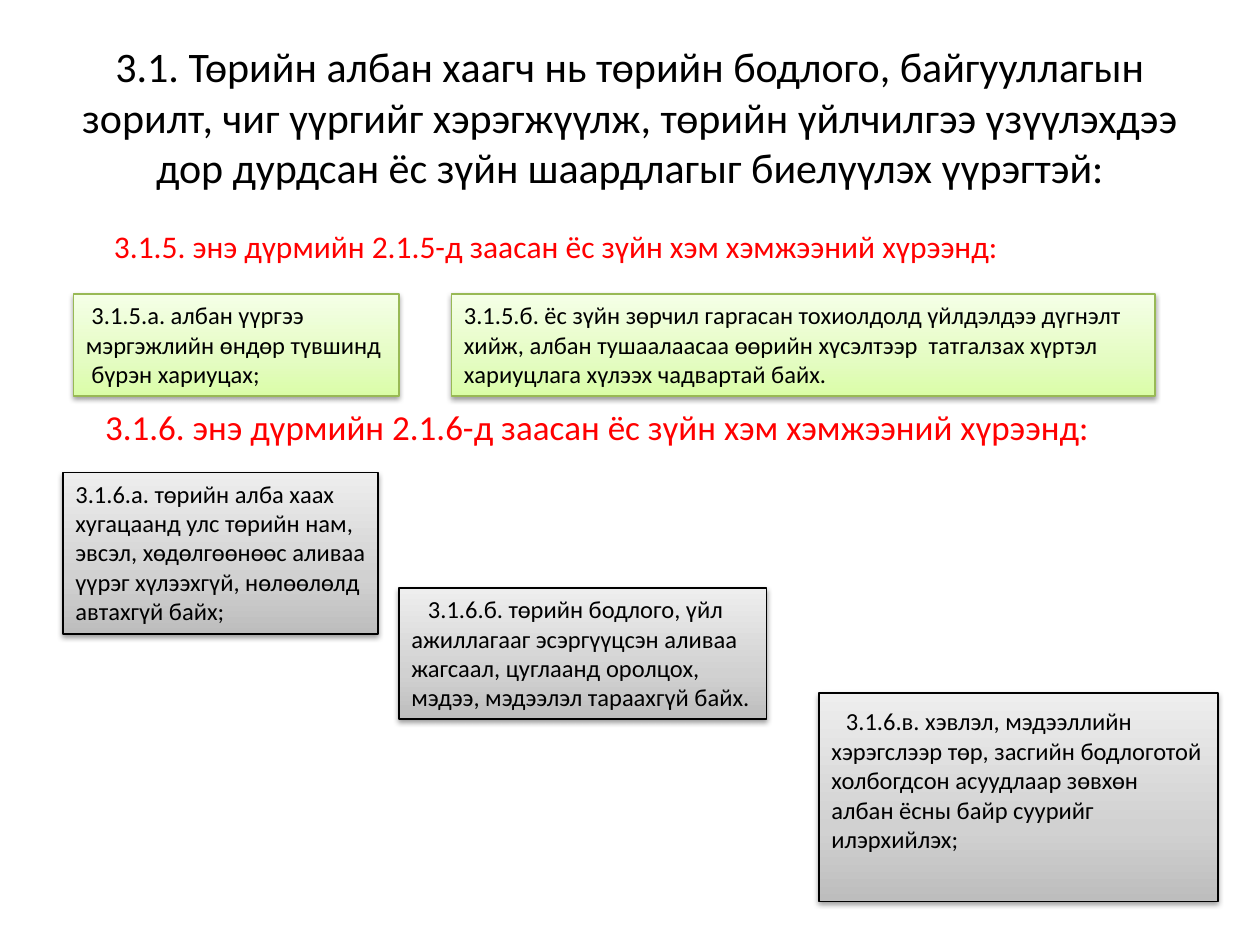
import copy

import pptx
import pptx.dml.color
import pptx.enum.shapes
import pptx.enum.text
import pptx.oxml
import pptx.oxml.ns
import pptx.util
from lxml import etree

Pt = pptx.util.Pt
RGBColor = pptx.dml.color.RGBColor
qn = pptx.oxml.ns.qn
PP_ALIGN = pptx.enum.text.PP_ALIGN
MSO_ANCHOR = pptx.enum.text.MSO_ANCHOR

FONT = "Calibri"
BLACK = RGBColor(0x00, 0x00, 0x00)
RED = RGBColor(0xFF, 0x00, 0x00)
GREEN_LINE = RGBColor(0x98, 0xB9, 0x55)
GREENS = (RGBColor(0xDA, 0xFD, 0xA7), RGBColor(0xE4, 0xFC, 0xC2), RGBColor(0xF5, 0xFF, 0xE7))
GRAYS = (RGBColor(0xBD, 0xBD, 0xBD), RGBColor(0xD1, 0xD1, 0xD1), RGBColor(0xEE, 0xEE, 0xEE))
STOPS = (0, 0.35, 1)

TITLE = ("3.1. Төрийн албан хаагч нь төрийн бодлого, байгууллагын зорилт, чиг үүргийг "
         "хэрэгжүүлж, төрийн үйлчилгээ үзүүлэхдээ дор дурдсан ёс зүйн шаардлагыг "
         "биелүүлэх үүрэгтэй:")
HEADING_5 = "3.1.5. энэ дүрмийн 2.1.5-д заасан ёс зүйн хэм хэмжээний хүрээнд:"
HEADING_6 = "3.1.6. энэ дүрмийн 2.1.6-д заасан ёс зүйн хэм хэмжээний хүрээнд:"
DUTIES_5 = (
    ((42, 168, 186, 58.3), 3.2, 3.6,
     "3.1.5.а. албан үүргээ мэргэжлийн өндөр түвшинд  бүрэн хариуцах;"),
    ((258, 168, 402, 58.3), 0, 3.6,
     "3.1.5.б. ёс зүйн зөрчил гаргасан тохиолдолд үйлдэлдээ дүгнэлт хийж, албан "
     "тушаалаасаа өөрийн хүсэлтээр  татгалзах хүртэл хариуцлага хүлээх чадвартай байх."),
)
DUTIES_6 = (
    ((36, 270, 180, 92.3), 0, 3.6,
     "3.1.6.а. төрийн алба хаах хугацаанд улс төрийн нам, эвсэл, хөдөлгөөнөөс аливаа "
     "үүрэг хүлээхгүй, нөлөөлөлд автахгүй байх;"),
    ((228, 336, 210, 75), 9.5, 3.6,
     "3.1.6.б. төрийн бодлого, үйл ажиллагааг эсэргүүцсэн аливаа жагсаал, цуглаанд "
     "оролцох, мэдээ, мэдээлэл тараахгүй байх."),
    ((468, 396, 228, 119), 8.3, 7.6,
     "3.1.6.в. хэвлэл, мэдээллийн хэрэгслээр төр, засгийн бодлоготой холбогдсон "
     "асуудлаар зөвхөн албан ёсны байр суурийг илэрхийлэх;"),
)


def write(s, text, *, size, color=BLACK, align=PP_ALIGN.LEFT, anchor=MSO_ANCHOR.TOP,
          indent=0, top=3.6):
    """Put one formatted paragraph into a shape."""
    tf = s.text_frame
    tf.word_wrap = True
    tf.vertical_anchor = anchor
    tf.margin_top = Pt(top)
    p = tf.paragraphs[0]
    p.alignment = align
    if indent:
        p._p.get_or_add_pPr().set("indent", str(Pt(indent)))
    r = p.add_run()
    r.text = text
    r.font.name = FONT
    r.font.size = Pt(size)
    r.font.color.rgb = color


def add_label(slide, box, text, **fmt):
    """Add a text box for a title or heading."""
    write(slide.shapes.add_textbox(*map(Pt, box)), text, **fmt)


def fill_gradient(s, colors):
    """Fill a shape with a three-stop gradient rising from the bottom."""
    s.fill.gradient()
    s.fill.gradient_angle = 90
    stop_list = s._element.spPr.find(qn("a:gradFill")).find(qn("a:gsLst"))
    stop_list.append(copy.deepcopy(stop_list[-1]))
    for stop, position, color in zip(s.fill.gradient_stops, STOPS, colors):
        stop.position = position
        stop.color.rgb = color


def cast_shadow(s):
    """Give a shape a soft shadow below it."""
    s.shadow.inherit = False
    effects = s._element.spPr.find(qn("a:effectLst"))
    shadow = etree.SubElement(effects, qn("a:outerShdw"), blurRad=str(Pt(3.1)),
                              dist=str(Pt(1.6)), dir="5400000", rotWithShape="0")
    color = etree.SubElement(shadow, qn("a:srgbClr"), val=str(BLACK))
    etree.SubElement(color, qn("a:alpha"), val="38000")


def add_duty(slide, box, text, colors, line, **fmt):
    """Add one shaded duty card."""
    s = slide.shapes.add_shape(pptx.enum.shapes.MSO_SHAPE.RECTANGLE, *map(Pt, box))
    fill_gradient(s, colors)
    s.line.color.rgb = line
    s.line.width = Pt(0.75)
    cast_shadow(s)
    write(s, text, size=14, **fmt)


def add_duties(slide, duties, colors, line):
    """Add every duty card of one section."""
    for box, indent, top, text in duties:
        add_duty(slide, box, text, colors, line, indent=indent, top=top)


def main():
    """Build and save the slide."""
    prs = pptx.Presentation()
    prs.slide_width, prs.slide_height = Pt(720), Pt(540)
    slide = prs.slides.add_slide(prs.slide_layouts[6])
    add_label(slide, (36, 21.6, 648, 90), TITLE, size=24,
              align=PP_ALIGN.CENTER, anchor=MSO_ANCHOR.MIDDLE)
    add_label(slide, (30, 228, 642, 78), HEADING_6, size=20, color=RED, indent=23)
    add_duties(slide, DUTIES_5, GREENS, GREEN_LINE)
    add_label(slide, (54, 126, 612, 29), HEADING_5, size=18, color=RED, indent=4)
    add_duties(slide, DUTIES_6, GRAYS, BLACK)
    prs.save("out.pptx")


if __name__ == "__main__":
    main()
